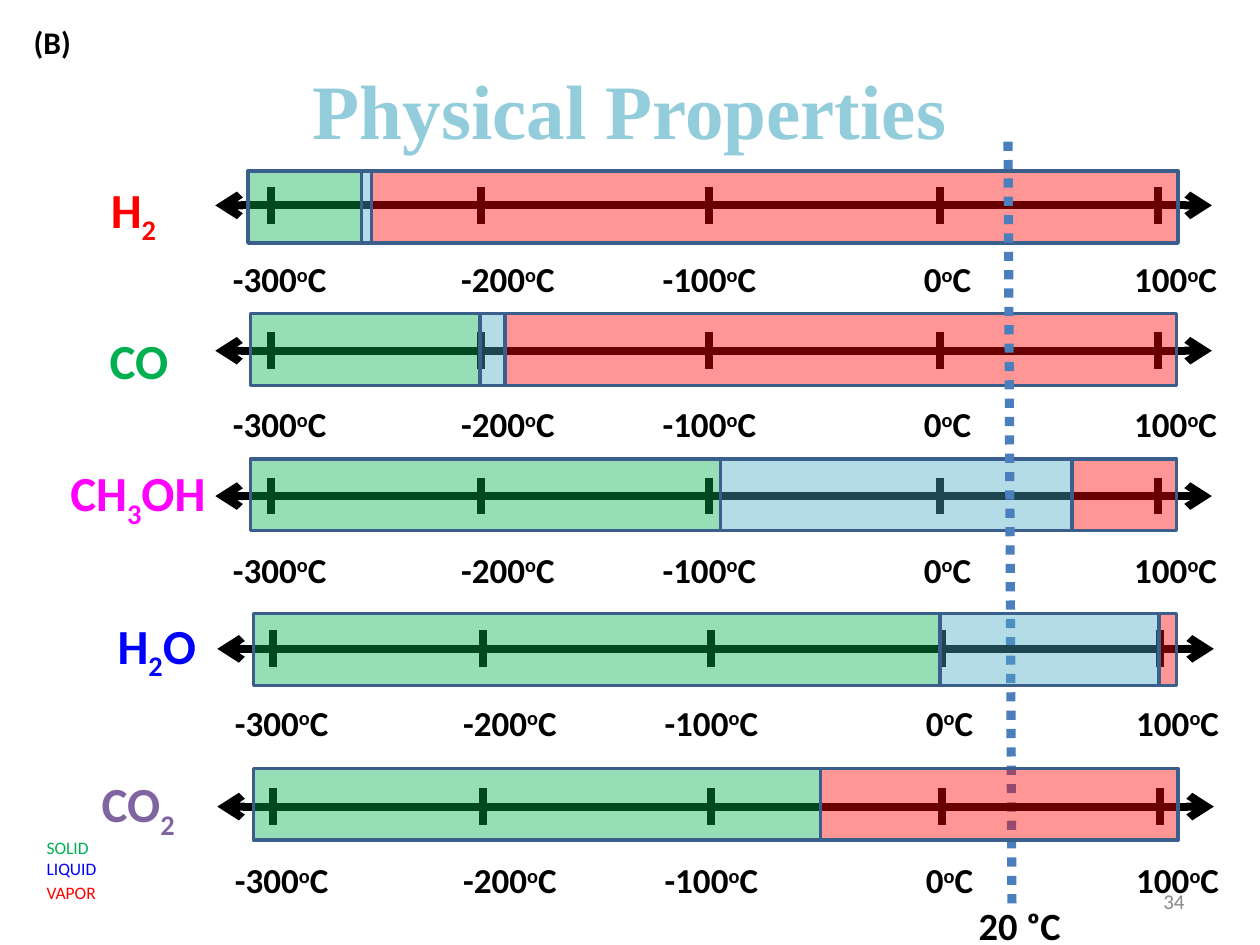
from pptx import Presentation
from pptx.dml.color import RGBColor
from pptx.enum.dml import MSO_LINE as Dash
from pptx.enum.shapes import MSO_CONNECTOR as Conn, MSO_SHAPE as Kind
from pptx.enum.text import MSO_ANCHOR as Anchor, PP_ALIGN as Align
from pptx.oxml.ns import qn
from pptx.util import Cm, Pt
from lxml.etree import SubElement

BLACK = RGBColor(0x00, 0x00, 0x00)
GREEN = RGBColor(0x00, 0xB0, 0x50)
RED = RGBColor(0xFF, 0x00, 0x00)
BLUE = RGBColor(0x00, 0x00, 0xFF)
PINK = RGBColor(0xFF, 0x00, 0xFF)
PURPLE = RGBColor(0x80, 0x64, 0xA2)
AQUA = RGBColor(0x4B, 0xAC, 0xC6)
SKY = RGBColor(0x93, 0xCD, 0xDC)
EDGE = RGBColor(0x3A, 0x5F, 0x8C)
DASH = RGBColor(0x4B, 0x7E, 0xBC)
GREY = RGBColor(0x89, 0x89, 0x89)

deck = Presentation()
deck.slide_width, deck.slide_height = Cm(25.4), Cm(19.05)
slide = deck.slides.add_slide(deck.slide_layouts[5])
shapes = slide.shapes


def add_text(box, lines, size, align=Align.LEFT, anchor=Anchor.MIDDLE, bold=True, base=0):
    """Add (parts, colour) lines; every second part is raised or lowered by base."""
    frame = shapes.add_textbox(*map(Cm, box)).text_frame
    frame.word_wrap = True
    frame.vertical_anchor = anchor
    for i, (parts, color) in enumerate(lines):
        para = frame.add_paragraph() if i else frame.paragraphs[0]
        para.alignment = align
        para.font.name, para.font.size, para.font.bold = "Calibri", Pt(size), bold
        para.font.color.rgb = color
        for j, part in enumerate(parts):
            run = para.add_run()
            run.text = part
            if j % 2:
                run.font._element.set("baseline", str(base))
    return frame


def add_line(x1, y1, x2, y2, color=BLACK, width=4.5):
    line = shapes.add_connector(Conn.STRAIGHT, Cm(x1), Cm(y1), Cm(x2), Cm(y2))
    line.line.color.rgb, line.line.width = color, Pt(width)
    SubElement(line._element.spPr, qn("a:effectLst"))
    return line


title = shapes.title
title.left, title.top, title.width, title.height = Cm(1.27), Cm(0.61), Cm(22.86), Cm(3.18)
title.text_frame.text = "Physical Properties"
title.text_frame.vertical_anchor = Anchor.MIDDLE
para = title.text_frame.paragraphs[0]
para.alignment = Align.CENTER
para.font.name, para.font.size, para.font.bold = "Times New Roman", Pt(44), True
para.font.color.rgb = SKY

# degrees, tick x, label left
TICKS = [("-300", 5.46, 3.99), ("-200", 9.7, 8.59), ("-100", 14.3, 12.65),
         ("0", 18.95, 17.45), ("100", 23.34, 22.05)]
PHASES = [GREEN, AQUA, RED]

# formula, colour, name box, alignment, axis y, axis shift, bar top, phase borders
ROWS = [
    (["H", "2"], RED, (0.8, 3.5, 3.78, 1.57), Align.CENTER,
     4.14, 0, 3.45, [5, 7.29, 7.49, 23.75]),
    (["CO"], GREEN, (0.91, 6.48, 3.78, 1.57), Align.CENTER,
     7.07, 0, 6.32, [5.05, 9.68, 10.18, 23.72]),
    (["CH", "3", "OH"], PINK, (0.89, 9.22, 3.78, 1.57), Align.CENTER,
     10, 0, 9.25, [5.05, 14.53, 21.61, 23.72]),
    (["H", "2", "O"], BLUE, (1.27, 12.29, 3.78, 1.57), Align.CENTER,
     13.08, 0.04, 12.37, [5.11, 18.95, 23.37, 23.72]),
    (["CO", "2"], PURPLE, (1.8, 15.49, 2.69, 1.57), Align.LEFT,
     16.26, 0.04, 15.49, [5.11, 16.54, 16.54, 23.75]),
]

for n, (name, color, box, align, y, shift, top, cuts) in enumerate(ROWS):
    if n == 3:  # the room-temperature line lies above three bars and below two
        room = add_line(20.4, 18.21, 20.32, 2.74, DASH, 5.25)
        room.line.dash_style = Dash.ROUND_DOT

    axis = add_line(4.34 + shift, y, 24.43 + shift, y)
    stroke = axis.line._get_or_add_ln()
    for end in ("a:headEnd", "a:tailEnd"):
        SubElement(stroke, qn(end), type="arrow")
    for deg, x, left in TICKS:
        add_line(x + shift, y - 0.37, x + shift, y + 0.37)
        add_text((left + shift, y + 0.79, 3.3, 1.37), [([deg, "o", "C"], BLACK)],
                 20, Align.CENTER, base=30000)

    add_text(box, [(name, color)], 28, align, base=-25000)

    for phase, start, stop in zip(PHASES, cuts, cuts[1:]):
        if start == stop:
            continue
        bar = shapes.add_shape(Kind.RECTANGLE, Cm(start), Cm(top), Cm(stop - start), Cm(1.45))
        bar.shadow.inherit = False
        bar.fill.solid()
        bar.fill.fore_color.rgb = phase
        tint = bar._element.spPr.find(qn("a:solidFill"))[0]
        SubElement(tint, qn("a:alpha"), val="41000")
        bar.line.color.rgb, bar.line.width = EDGE, Pt(2)

add_text((19.48, 18.06, 2.97, 1.19), [(["20 ᵒC"], BLACK)], 22, anchor=Anchor.TOP)
key = add_text((0.69, 16.74, 2.97, 1.63),
               [(["SOLID"], GREEN), (["LIQUID"], BLUE), (["VAPOR"], RED)],
               10, anchor=Anchor.TOP, bold=False)
key.paragraphs[2].space_before = Pt(2)
add_text((18.21, 17.65, 5.92, 1.02), [(["34"], GREY)], 12, Align.RIGHT, bold=False)
add_text((0.43, 0.33, 1.47, 1.02), [(["(B)"], BLACK)], 18, anchor=Anchor.TOP)

deck.save("out.pptx")
